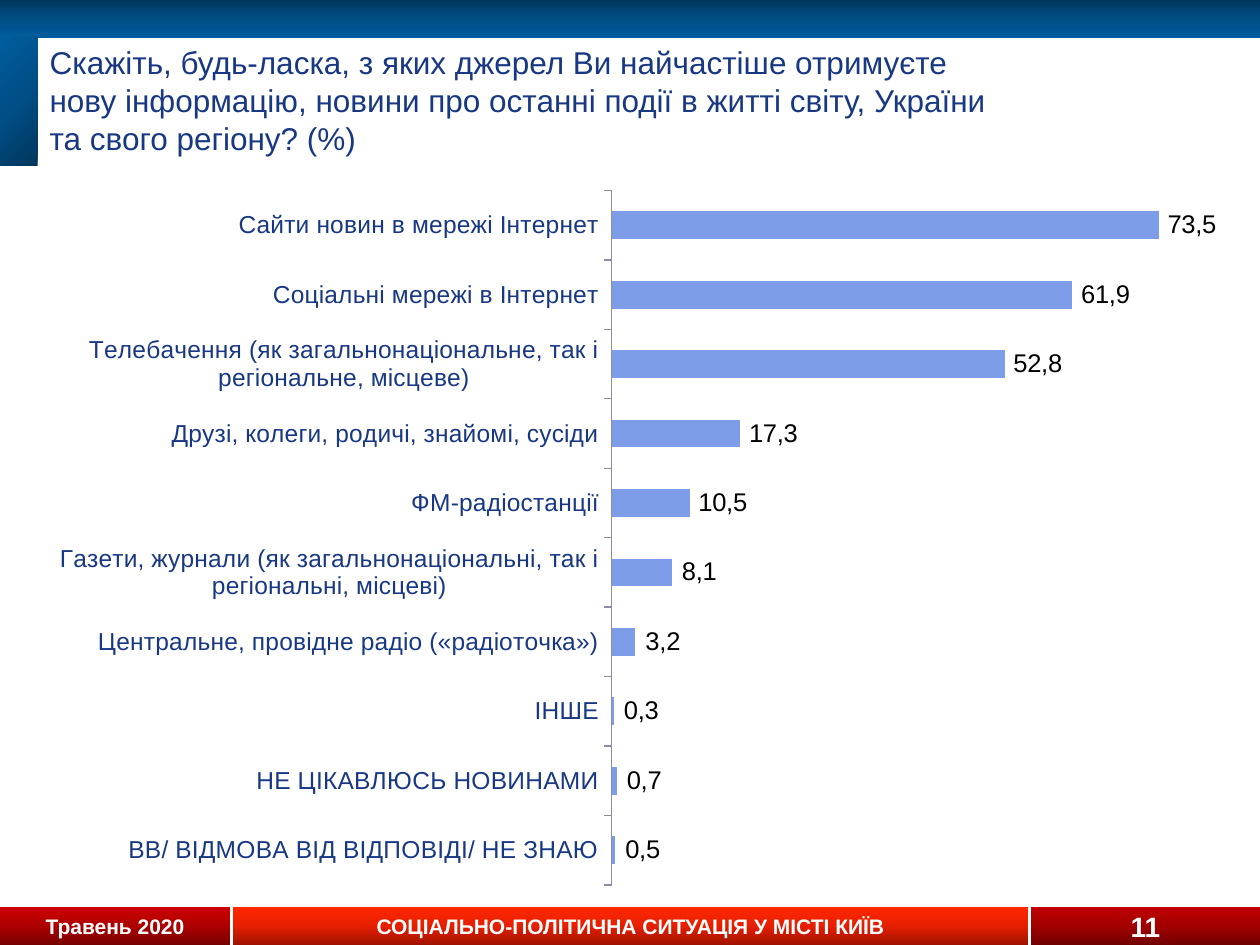
"""Build the slide about the news sources used in Kyiv."""
from copy import deepcopy
from typing import NamedTuple

from lxml.etree import SubElement
from pptx import Presentation
from pptx.chart.data import CategoryChartData
from pptx.dml.color import RGBColor
from pptx.enum.chart import XL_CHART_TYPE, XL_LABEL_POSITION, XL_TICK_LABEL_POSITION, XL_TICK_MARK
from pptx.enum.shapes import MSO_SHAPE
from pptx.enum.text import MSO_ANCHOR, MSO_AUTO_SIZE, PP_ALIGN
from pptx.oxml import parse_xml
from pptx.oxml.ns import nsdecls, qn
from pptx.util import Cm, Pt

FONT = "Arial"
SHARE = "###0.0%"
WHITE = RGBColor(0xFF, 0xFF, 0xFF)
BLACK = RGBColor(0x00, 0x00, 0x00)
NAVY = RGBColor(0x18, 0x38, 0x83)
BLUE = RGBColor(0x7D, 0x9D, 0xE9)
GREY = RGBColor(0x8C, 0x8C, 0xA8)
OCEAN = (RGBColor(0x00, 0x37, 0x5E), RGBColor(0x00, 0x4E, 0x85), RGBColor(0x00, 0x5D, 0x9E))
WINE = (RGBColor(0x77, 0x00, 0x00), RGBColor(0xAD, 0x00, 0x00), RGBColor(0xCE, 0x00, 0x00))
FLAME = (RGBColor(0xA0, 0x12, 0x00), RGBColor(0xE6, 0x1F, 0x00), RGBColor(0xFF, 0x28, 0x00))
BRICK = (RGBColor(0x72, 0x00, 0x00), RGBColor(0xA2, 0x00, 0x00), RGBColor(0xC0, 0x00, 0x00))


class Band(NamedTuple):
    left: float
    top: float
    width: float
    height: float
    tones: tuple
    angle: int
    text: str = ""
    size: int = 12


class Source(NamedTuple):
    name: str
    share: float


BANDS = [
    Band(0, 18.29, 4.64, 0.76, WINE, 90, "Травень 2020"),
    Band(4.7, 18.29, 16.03, 0.76, FLAME, 90, "СОЦІАЛЬНО-ПОЛІТИЧНА СИТУАЦІЯ У МІСТІ КИЇВ"),
    Band(20.78, 18.29, 4.62, 0.76, BRICK, 90, "11", 16),
    Band(0, 0, 25.4, 0.76, OCEAN, 270),
    Band(0, 0.74, 0.76, 2.6, OCEAN, 135),
]
SOURCES = [
    Source("ВВ/ ВІДМОВА ВІД ВІДПОВІДІ/ НЕ ЗНАЮ", 0.005),
    Source("НЕ ЦІКАВЛЮСЬ НОВИНАМИ", 0.007),
    Source("ІНШЕ", 0.003),
    Source("Центральне, провідне радіо («радіоточка»)", 0.032),
    Source("Газети, журнали (як загальнонаціональні, так і регіональні, місцеві)", 0.081),
    Source("ФМ-радіостанції", 0.105),
    Source("Друзі, колеги, родичі, знайомі, сусіди", 0.173),
    Source("Телебачення (як загальнонаціональне, так і регіональне, місцеве)", 0.528),
    Source("Соціальні мережі в Інтернет", 0.619),
    Source("Сайти новин в мережі Інтернет", 0.735),
]
TITLE = (
    "Скажіть, будь-ласка, з яких джерел Ви найчастіше отримуєте нову інформацію, "
    "новини про останні події в житті світу, України та свого регіону? (%)"
)


def style(font, size: float, tone: RGBColor, bold: bool = False) -> None:
    """Set the look of a font."""
    font.name, font.size, font.bold = FONT, Pt(size), bold
    font.color.rgb = tone


def draw_band(slide, band: Band) -> None:
    """Draw a gradient band with its text."""
    box = [Cm(side) for side in band[:4]]
    shape = slide.shapes.add_shape(MSO_SHAPE.RECTANGLE, *box)
    shape.shadow.inherit = False
    shape.line.fill.background()
    shape.fill.gradient()
    shape.fill.gradient_angle = band.angle
    stops = shape._element.spPr.find(".//" + qn("a:gsLst"))
    stops.append(deepcopy(stops[-1]))
    for stop, tone, place in zip(shape.fill.gradient_stops, band.tones, (0, 0.5, 1)):
        stop.color.rgb = tone
        stop.position = place
    if band.text:
        frame = shape.text_frame
        frame.text = band.text
        frame.vertical_anchor = MSO_ANCHOR.MIDDLE
        frame.margin_top = frame.margin_bottom = 0
        line = frame.paragraphs[0]
        line.alignment = PP_ALIGN.CENTER
        style(line.runs[0].font, band.size, WHITE, True)


def set_title(slide) -> None:
    """Place and fill the title."""
    title = slide.shapes.title
    title.left, title.top, title.width, title.height = Cm(0.44), Cm(0.73), Cm(19.79), Cm(2.57)
    frame = title.text_frame
    frame.text = TITLE
    frame.word_wrap = True
    frame.auto_size = MSO_AUTO_SIZE.NONE
    frame.vertical_anchor = MSO_ANCHOR.MIDDLE
    frame.margin_left, frame.margin_right = Cm(0.56), Cm(0.25)
    frame.margin_top = frame.margin_bottom = Cm(0.13)
    line = frame.paragraphs[0]
    line.alignment = PP_ALIGN.LEFT
    style(line.runs[0].font, 18, NAVY)


def add_layout(node, index: int, **parts) -> None:
    """Give a chart part a manual layout."""
    for old in node.findall(qn("c:layout")):
        node.remove(old)
    layout = parse_xml(f"<c:layout {nsdecls('c')}><c:manualLayout/></c:layout>")
    for name, value in parts.items():
        SubElement(layout[0], qn(f"c:{name}")).set("val", str(value))
    node.insert(index, layout)


def set_labels(bars) -> None:
    """Write each share just past the end of its bar."""
    labels = bars.data_labels
    labels.show_value = True
    labels.number_format, labels.number_format_is_linked = SHARE, False
    labels.position = XL_LABEL_POSITION.INSIDE_END
    style(labels.font, 14.6, BLACK, True)
    for index, source in enumerate(SOURCES):
        text = f"{source.share * 100:.1f}".replace(".", ",")
        label = bars.points[index].data_label
        label.text_frame.text = text
        style(label.text_frame.paragraphs[0].runs[0].font, 14.6, BLACK)
        label.position = XL_LABEL_POSITION.INSIDE_END
        node = bars._element.findall(".//" + qn("c:dLbl"))[index]
        add_layout(node, 1, x=round(0.01 * len(text) + 0.01, 2), y=0)


def draw_chart(slide) -> None:
    """Draw the bars with a share beside each."""
    data = CategoryChartData(number_format=SHARE)
    data.categories = [source.name for source in SOURCES]
    data.add_series("Series 1", [source.share for source in SOURCES])
    chart = slide.shapes.add_chart(
        XL_CHART_TYPE.BAR_STACKED, Cm(0.02), Cm(3.49), Cm(25.12), Cm(14.66), data
    ).chart
    chart.has_legend = chart.has_title = False
    style(chart.font, 18.7, NAVY)
    scale = chart.value_axis
    scale.minimum_scale, scale.maximum_scale = 0, 0.8
    scale.has_major_gridlines = scale.visible = False
    scale.tick_labels.number_format = SHARE
    scale.tick_labels.number_format_is_linked = False
    axis = chart.category_axis
    axis.major_tick_mark = XL_TICK_MARK.OUTSIDE
    axis.tick_label_position = XL_TICK_LABEL_POSITION.LOW
    axis.format.line.color.rgb = GREY
    style(axis.tick_labels.font, 14, NAVY)
    plot = chart.plots[0]
    plot.gap_width, plot.overlap, plot.vary_by_categories = 150, 100, False
    bars = plot.series[0]
    bars.format.fill.solid()
    bars.format.fill.fore_color.rgb = BLUE
    set_labels(bars)
    area = chart._chartSpace.find(".//" + qn("c:plotArea"))
    add_layout(area, 0, layoutTarget="inner", xMode="edge", yMode="edge",
               x=0.49, y=0.024, w=0.478, h=0.955)


def main() -> None:
    """Build and save the slide."""
    deck = Presentation()
    deck.slide_width, deck.slide_height = Cm(25.4), Cm(19.05)
    slide = deck.slides.add_slide(deck.slide_layouts[5])
    for band in BANDS:
        draw_band(slide, band)
    draw_chart(slide)
    set_title(slide)
    deck.save("out.pptx")


if __name__ == "__main__":
    main()
